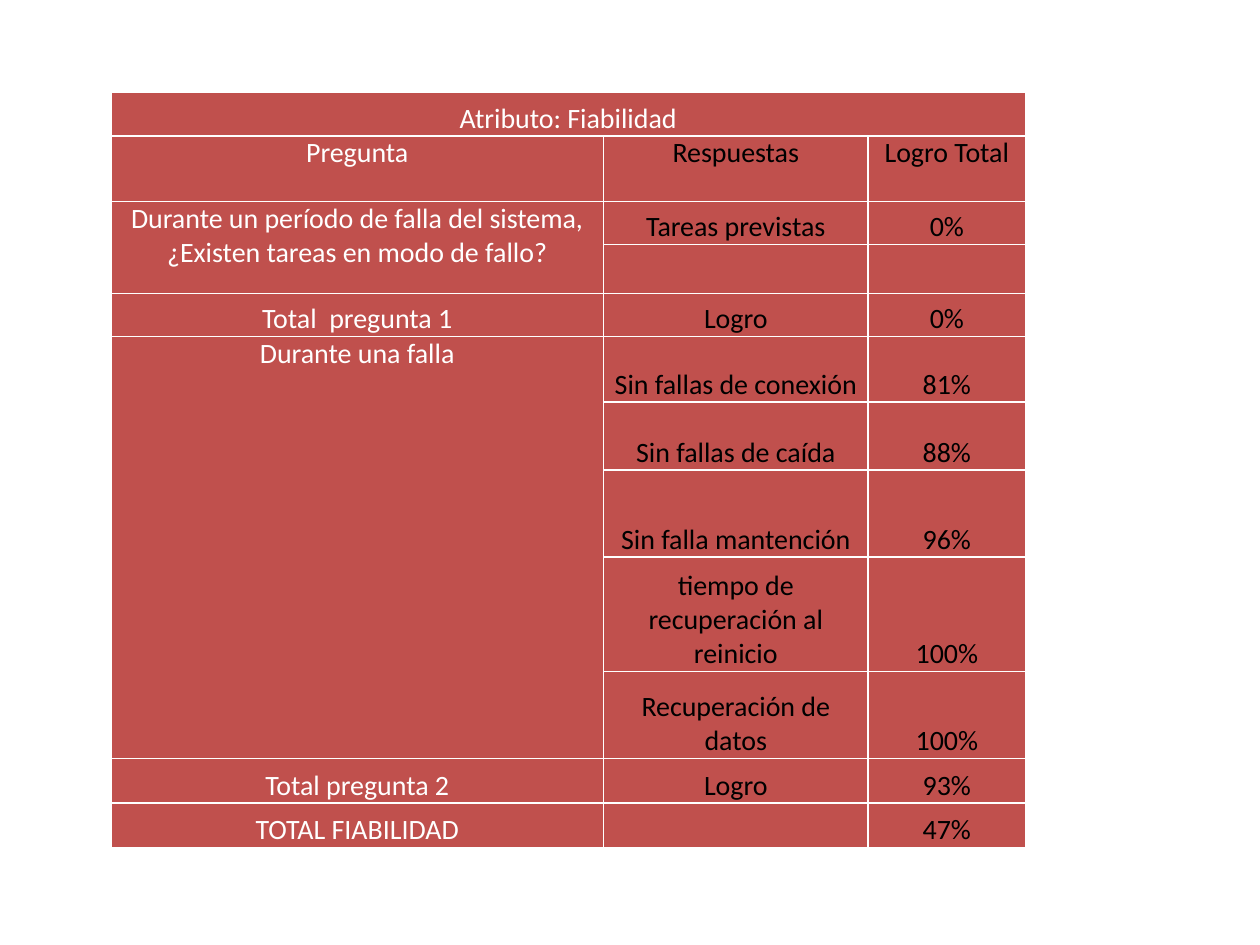
"""Build a slide with the reliability attribute table."""

from dataclasses import dataclass

from lxml import etree
from pptx import Presentation
from pptx.dml.color import RGBColor
from pptx.enum.text import MSO_ANCHOR, PP_ALIGN
from pptx.oxml.ns import qn
from pptx.table import Table, _Cell
from pptx.util import Pt

CENTER = PP_ALIGN.CENTER
TOP, BOTTOM = MSO_ANCHOR.TOP, MSO_ANCHOR.BOTTOM
COLORS = {"fill": "C0504D", "border": "FFFFFF", "label": "FFFFFF", "answer": "000000"}
FONT, FONT_SIZE = "Calibri", 16
BORDER_WIDTH = 1
LEFT, TABLE_TOP = 63.4, 52.6
COLUMN_WIDTHS = [281.5, 151.2, 90]


@dataclass(frozen=True)
class Row:
    """One table row: its height, its texts and how its first cell spans."""

    height: float
    question: str
    answer: str = ""
    score: str = ""
    rows_spanned: int = 1
    columns_spanned: int = 1
    question_anchor: MSO_ANCHOR = BOTTOM
    answer_anchor: MSO_ANCHOR = BOTTOM


ROWS = [
    Row(25.2, "Atributo: Fiabilidad", columns_spanned=3),
    Row(37.4, "Pregunta", "Respuestas", "Logro Total",
        question_anchor=TOP, answer_anchor=TOP),
    Row(24.5, "Durante un período de falla del sistema, ¿Existen tareas en modo de fallo?",
        "Tareas previstas", "0%", rows_spanned=2, question_anchor=TOP),
    Row(28.1, ""),
    Row(24.5, "Total  pregunta 1", "Logro", "0%"),
    Row(37.4, "Durante una falla", "Sin fallas de conexión", "81%",
        rows_spanned=5, question_anchor=TOP),
    Row(38.9, "", "Sin fallas de caída", "88%"),
    Row(49.7, "", "Sin falla mantención", "96%"),
    Row(65.5, "", "tiempo de recuperación al reinicio", "100%"),
    Row(49.7, "", "Recuperación de datos", "100%"),
    Row(25.4, "Total pregunta 2", "Logro", "93%"),
    Row(25.4, "TOTAL FIABILIDAD", "", "47%"),
]


def add_borders(cell: _Cell) -> None:
    """Draw a solid line on all four sides of a cell."""
    properties = cell._tc.get_or_add_tcPr()
    for side in ("lnL", "lnR", "lnT", "lnB"):
        line = etree.SubElement(properties, qn(f"a:{side}"), w=str(Pt(BORDER_WIDTH)))
        solid = etree.SubElement(line, qn("a:solidFill"))
        etree.SubElement(solid, qn("a:srgbClr"), val=COLORS["border"])


def fill_cell(cell: _Cell, text: str, color: str, anchor: MSO_ANCHOR) -> None:
    """Write and format one cell."""
    add_borders(cell)
    cell.fill.solid()
    cell.fill.fore_color.rgb = RGBColor.from_string(COLORS["fill"])
    cell.margin_left = cell.margin_right = Pt(3.6)
    cell.margin_top = cell.margin_bottom = Pt(0)
    cell.vertical_anchor = anchor
    cell.text = text
    paragraph = cell.text_frame.paragraphs[0]
    paragraph.alignment = CENTER
    paragraph.font.name = FONT
    paragraph.font.size = Pt(FONT_SIZE)
    paragraph.font.bold = False
    paragraph.font.color.rgb = RGBColor.from_string(COLORS[color])


def draw_row(table: Table, index: int, row: Row) -> None:
    """Set the height of a row, fill its cells and merge its first cell."""
    table.rows[index].height = Pt(row.height)
    fill_cell(table.cell(index, 0), row.question, "label", row.question_anchor)
    for column, text in enumerate((row.answer, row.score), start=1):
        fill_cell(table.cell(index, column), text, "answer", row.answer_anchor)


def merge_question(table: Table, index: int, row: Row) -> None:
    """Merge the first cell of a row over the cells it spans."""
    if row.rows_spanned > 1 or row.columns_spanned > 1:
        last = table.cell(index + row.rows_spanned - 1, row.columns_spanned - 1)
        table.cell(index, 0).merge(last)


def main() -> None:
    """Create the presentation and save it."""
    presentation = Presentation()
    presentation.slide_width, presentation.slide_height = Pt(720), Pt(540)
    slide = presentation.slides.add_slide(presentation.slide_layouts[6])
    table = slide.shapes.add_table(
        len(ROWS), len(COLUMN_WIDTHS), Pt(LEFT), Pt(TABLE_TOP),
        Pt(sum(COLUMN_WIDTHS)), Pt(sum(row.height for row in ROWS)),
    ).table
    table.first_row = table.horz_banding = False
    for column, width in zip(table.columns, COLUMN_WIDTHS):
        column.width = Pt(width)
    for index, row in enumerate(ROWS):
        draw_row(table, index, row)
    for index, row in enumerate(ROWS):
        merge_question(table, index, row)
    presentation.save("out.pptx")


if __name__ == "__main__":
    main()
